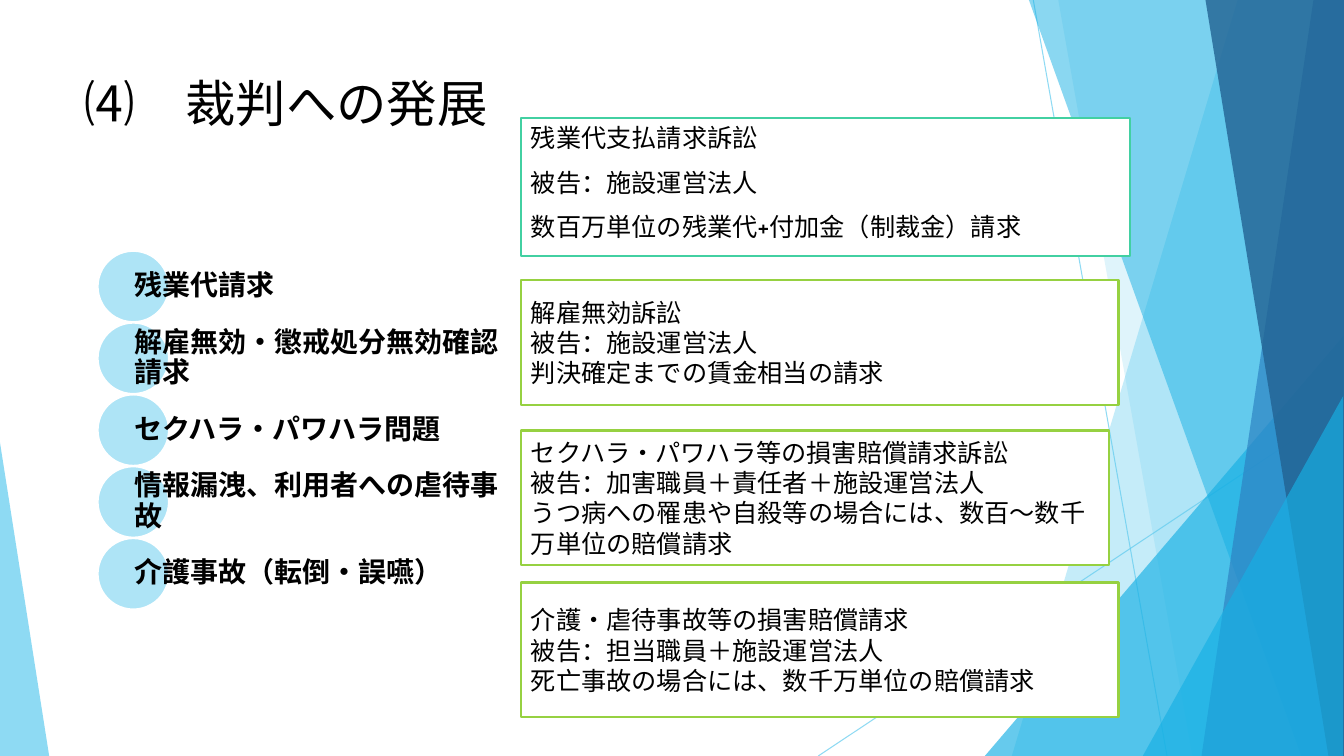
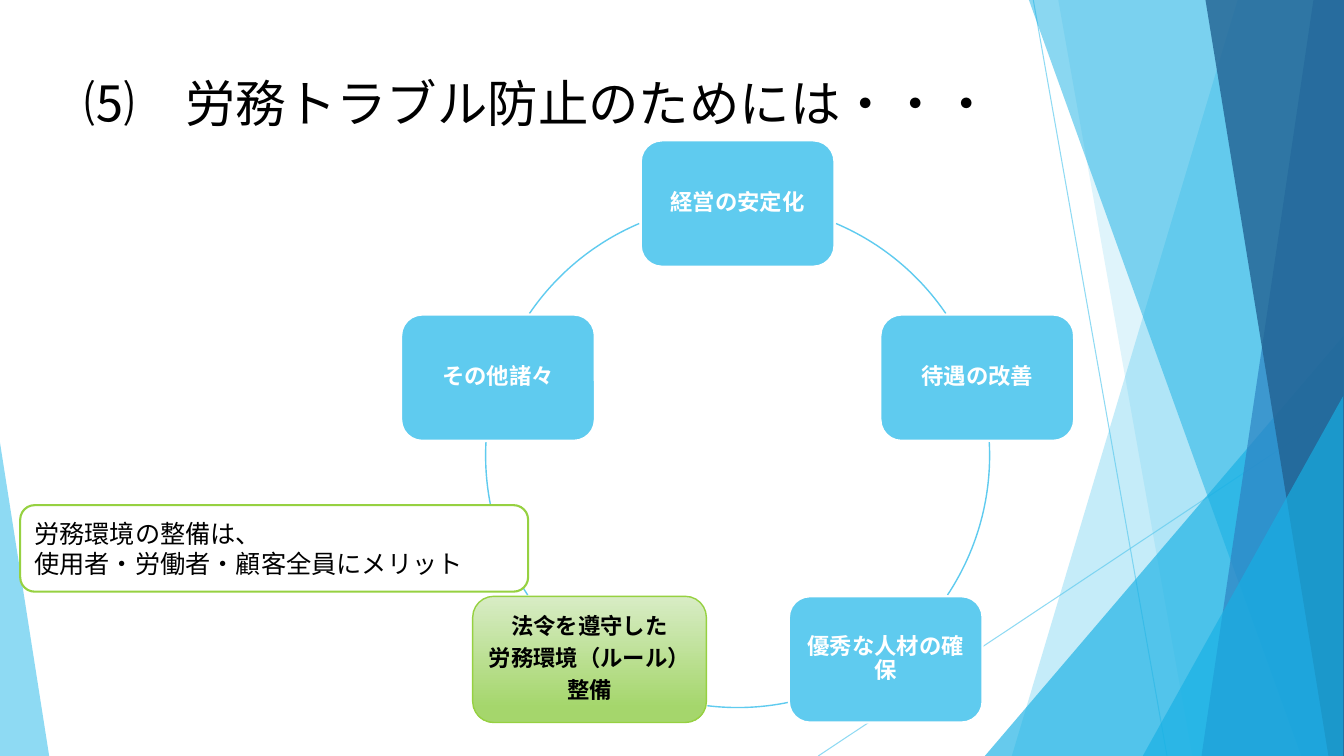
import math

import lxml.etree
import pptx
import pptx.dml.color
import pptx.enum.shapes
import pptx.enum.text
import pptx.oxml.ns
import pptx.util

Cm = pptx.util.Cm
Pt = pptx.util.Pt
RGBColor = pptx.dml.color.RGBColor
SHAPE = pptx.enum.shapes.MSO_SHAPE
ANCHOR = pptx.enum.text.MSO_ANCHOR
ALIGN = pptx.enum.text.PP_ALIGN
qn = pptx.oxml.ns.qn

SKY = RGBColor(0x5F, 0xCB, 0xEF)
AZURE = RGBColor(0x17, 0xB0, 0xE4)
BLUE = RGBColor(0x2E, 0x83, 0xC3)
NAVY = RGBColor(0x22, 0x62, 0x92)
TEAL = RGBColor(0x42, 0xD0, 0xA2)
GREEN = RGBColor(0x96, 0xD1, 0x41)
PALE_GREEN = RGBColor(0xD8, 0xEC, 0xC5)
SOFT_GREEN = RGBColor(0xA5, 0xD6, 0x6C)
WHITE = RGBColor(0xFF, 0xFF, 0xFF)
BLACK = RGBColor(0x00, 0x00, 0x00)
FONT = "Cabin"
WIDTH, HEIGHT = 33.87, 19.05


def paint(shape, fill=None, line=None, width=1.5, opacity=100):
    shape.shadow.inherit = False
    if fill is None:
        shape.fill.background()
    else:
        shape.fill.solid()
        shape.fill.fore_color.rgb = fill
        if opacity < 100:
            color = shape.element.spPr.find(".//" + qn("a:srgbClr"))
            lxml.etree.SubElement(color, qn("a:alpha"), val=str(opacity * 1000))
    if line is None:
        shape.line.fill.background()
    else:
        shape.line.color.rgb = line
        shape.line.width = Pt(width)


def write(frame, lines, size, color=BLACK, bold=False, align=ALIGN.LEFT,
          anchor=ANCHOR.MIDDLE, spacing=1.0, before=0, after=0):
    frame.word_wrap = True
    frame.auto_size = pptx.enum.text.MSO_AUTO_SIZE.NONE
    frame.vertical_anchor = anchor
    for index, line in enumerate(lines):
        para = frame.add_paragraph() if index else frame.paragraphs[0]
        para.alignment = align
        para.line_spacing = spacing
        para.space_before = Pt(before)
        para.space_after = Pt(after)
        span = para.add_run()
        span.text = line
        span.font.name = FONT
        span.font.size = Pt(size)
        span.font.bold = bold
        span.font.color.rgb = color
        latin = span.font._element.find(qn("a:latin"))
        latin.addnext(latin.makeelement(qn("a:ea"), {"typeface": FONT}))


deck = pptx.Presentation()
deck.slide_width = Cm(WIDTH)
deck.slide_height = Cm(HEIGHT)

layout = deck.slide_layouts[5]
for holder in list(layout.placeholders):
    if holder.placeholder_format.idx:
        holder.element.getparent().remove(holder.element)
    else:
        holder.left, holder.top = Cm(1.88), Cm(1.7)
        holder.width, holder.height = Cm(23.88), Cm(3.66)

pages = []
for heading in ["⑷　裁判への発展", "⑸　労務トラブル防止のためには・・・"]:
    page = deck.slides.add_slide(layout)
    write(page.shapes.title.text_frame, [heading], 36, anchor=ANCHOR.TOP)
    pages.append(page)
lawsuit_page, prevention_page = pages

backdrop = lawsuit_page.shapes.add_group_shape()
for x1, y1, x2, y2 in [(26.04, 0, 29.41, HEIGHT), (WIDTH, 10.24, 20.62, HEIGHT)]:
    ray = backdrop.shapes.add_connector(
        pptx.enum.shapes.MSO_CONNECTOR.STRAIGHT, Cm(x1), Cm(y1), Cm(x2), Cm(y2))
    ray.line.color.rgb = SKY
    ray.line.width = Pt(0.75)
    color = ray.element.spPr.find(".//" + qn("a:srgbClr"))
    lxml.etree.SubElement(color, qn("a:alpha"), val="70000")
    lxml.etree.SubElement(ray.element.spPr, qn("a:effectLst"))

facets = [
    ("band", (31.19, 25.5), SKY, 36),
    ("band", (26.67, 30.05), SKY, 20),
    ("triangle", (24.82, 8.46, 9.04, 1), AZURE, 66),
    ("band", (25.93, 32.79), AZURE, 50),
    ("band", (33.1, 30.28), BLUE, 70),
    ("band", (30.38, 33.48), NAVY, 80),
    ("triangle", (28.8, 9.98, 5.05, 1), AZURE, 66),
    ("triangle", (0, 11.15, 1.24, 0), SKY, 70),
]
for kind, geometry, color, opacity in facets:
    if kind == "band":
        top_x, bottom_x = geometry
        outline = backdrop.shapes.build_freeform(Cm(top_x), Cm(0))
        corners = [(WIDTH, 0), (WIDTH, HEIGHT), (bottom_x, HEIGHT)]
        outline.add_line_segments([(Cm(x), Cm(y)) for x, y in corners], close=True)
        facet = outline.convert_to_shape()
    else:
        left, top, width, apex = geometry
        facet = backdrop.shapes.add_shape(
            SHAPE.ISOSCELES_TRIANGLE, Cm(left), Cm(top), Cm(width), Cm(HEIGHT - top))
        facet.adjustments[0] = apex
    paint(facet, color, opacity=opacity)
layout.shapes.element.insert(2, backdrop.element)

disputes = ["残業代請求", "解雇無効・懲戒処分無効確認請求", "セクハラ・パワハラ問題",
            "情報漏洩、利用者への虐待事故", "介護事故（転倒・誤嚥）"]
for index, dispute in enumerate(disputes):
    top = Cm(6.32 + index * 1.81)
    circle = lawsuit_page.shapes.add_shape(SHAPE.OVAL, Cm(2.46), top, Cm(1.8), Cm(1.8))
    paint(circle, SKY, WHITE, opacity=50)
    box = lawsuit_page.shapes.add_textbox(Cm(3.38), top, Cm(9.63), Cm(1.8))
    frame = box.text_frame
    frame.margin_left = frame.margin_right = 0
    frame.margin_top = frame.margin_bottom = Cm(0.08)
    write(frame, [dispute], 20, bold=True, spacing=0.9)

lawsuits = [
    (2.97, 15.34, 3.48, TEAL, ANCHOR.TOP, 10,
     ["残業代支払請求訴訟", "被告：施設運営法人",
      "数百万単位の残業代+付加金（制裁金）請求"]),
    (7.06, 15.06, 3.15, GREEN, ANCHOR.MIDDLE, 0,
     ["解雇無効訴訟", "被告：施設運営法人", "判決確定までの賃金相当の請求"]),
    (10.85, 14.81, 3.38, GREEN, ANCHOR.MIDDLE, 0,
     ["セクハラ・パワハラ等の損害賠償請求訴訟",
      "被告：加害職員＋責任者＋施設運営法人",
      "うつ病への罹患や自殺等の場合には、数百～数千万単位の賠償請求"]),
    (14.68, 15.06, 3.4, GREEN, ANCHOR.MIDDLE, 0,
     ["介護・虐待事故等の損害賠償請求", "被告：担当職員＋施設運営法人",
      "死亡事故の場合には、数千万単位の賠償請求"]),
]
for top, width, height, border, anchor, before, lines in lawsuits:
    box = lawsuit_page.shapes.add_shape(
        SHAPE.RECTANGLE, Cm(13.13), Cm(top), Cm(width), Cm(height))
    paint(box, WHITE, border)
    write(box.text_frame, lines, 18, anchor=anchor, before=before)

CENTER_X, CENTER_Y, RADIUS = 18.59, 11.48, 6.35
for start, end in [(293, 325.7), (356.8, 33.6), (78.4, 96.9), (146.4, 183.2), (214.3, 247)]:
    arc = prevention_page.shapes.add_shape(
        SHAPE.ARC, Cm(CENTER_X - RADIUS), Cm(CENTER_Y - RADIUS),
        Cm(2 * RADIUS), Cm(2 * RADIUS))
    arc.adjustments[0] = start * 0.6
    arc.adjustments[1] = end * 0.6
    paint(arc, line=SKY, width=1)

stages = [["経営の安定化"], ["待遇の改善"], ["優秀な人材の確保"],
          ["法令を遵守した", "労務環境（ルール）", "整備"], ["その他諸々"]]
for index, lines in enumerate(stages):
    is_start = len(lines) > 1
    angle = math.radians(index * 72)
    width, height = 5.89 if is_start else 4.88, 3.18
    left = CENTER_X + RADIUS * math.sin(angle) - width / 2
    top = CENTER_Y - RADIUS * math.cos(angle) - height / 2
    stage = prevention_page.shapes.add_shape(
        SHAPE.ROUNDED_RECTANGLE, Cm(left), Cm(top), Cm(width), Cm(height))
    if is_start:
        paint(stage, line=GREEN, width=1)
        stage.fill.gradient()
        stage.fill.gradient_angle = 270
        stops = [(0, PALE_GREEN), (0.88, SOFT_GREEN)]
        for stop, (position, color) in zip(stage.fill.gradient_stops, stops):
            stop.position = position
            stop.color.rgb = color
    else:
        paint(stage, SKY, WHITE)
    frame = stage.text_frame
    frame.margin_left = frame.margin_right = Cm(0.18)
    frame.margin_top = frame.margin_bottom = Cm(0.18)
    write(frame, lines, 16, BLACK if is_start else WHITE, bold=True,
          align=ALIGN.CENTER, spacing=0.9, after=5.6)

merit = prevention_page.shapes.add_shape(
    SHAPE.ROUNDED_RECTANGLE, Cm(0.51), Cm(12.73), Cm(12.8), Cm(2.18))
paint(merit, WHITE, GREEN)
write(merit.text_frame, ["労務環境の整備は、", "使用者・労働者・顧客全員にメリット"], 18)

deck.save("out.pptx")
